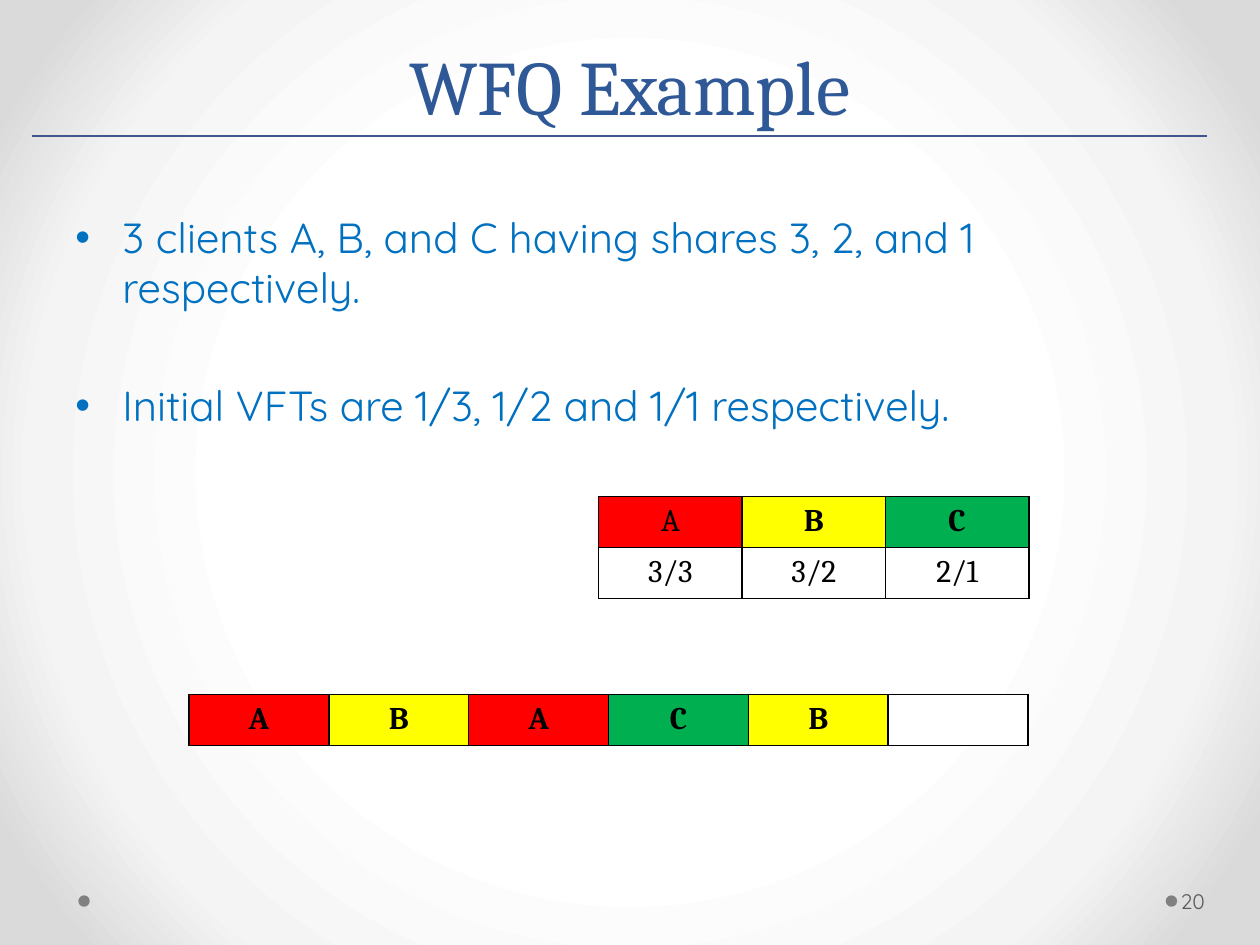
from dataclasses import dataclass

from lxml.etree import SubElement
from pptx import Presentation
from pptx.dml.color import RGBColor
from pptx.enum.shapes import MSO_CONNECTOR as Connector, MSO_SHAPE as Shape
from pptx.enum.text import MSO_ANCHOR as Anchor, PP_ALIGN as Align
from pptx.oxml import parse_xml
from pptx.oxml.ns import nsdecls, qn
from pptx.util import Cm, Pt

HEADING_FONT = "Cambria"
BODY_FONT = "Quicksand"

TITLE_BLUE = RGBColor(0x2F, 0x58, 0x97)
RULE_BLUE = RGBColor(0x42, 0x56, 0x8D)
BODY_BLUE = RGBColor(0x00, 0x70, 0xC0)
DOT_GRAY = RGBColor(0x80, 0x80, 0x80)
NUMBER_GRAY = RGBColor(0x59, 0x59, 0x59)
BLACK = RGBColor(0x00, 0x00, 0x00)
WHITE = RGBColor(0xFF, 0xFF, 0xFF)
RED = RGBColor(0xFF, 0x00, 0x00)
YELLOW = RGBColor(0xFF, 0xFF, 0x00)
GREEN = RGBColor(0x00, 0xB0, 0x50)
CLIENT_COLORS = {"A": RED, "B": YELLOW, "C": GREEN}
BACKGROUND_STOPS = ((50, WHITE), (76, RGBColor(0xF4, 0xF4, 0xF4)),
                    (92, RGBColor(0xDA, 0xDA, 0xDA)))

ROW_HEIGHT = 1.03


@dataclass
class Cell:
    text: str
    bold: bool = False


@dataclass
class Grid:
    left: float
    top: float
    column_width: float
    rows: list[list[Cell]]


@dataclass
class Bullet:
    text: str
    space_before: float


GRIDS = [
    Grid(12.07, 10.01, 2.89, [
        [Cell("A"), Cell("B", True), Cell("C", True)],
        [Cell("3/3"), Cell("3/2"), Cell("2/1")],
    ]),
    Grid(3.81, 14, 2.82, [[Cell(name, True) for name in ("A", "B", "A", "C", "B", "")]]),
]
BULLETS = [
    Bullet("3 clients A, B, and C having shares 3, 2, and 1 respectively.", 4.8),
    Bullet("Initial VFTs are 1/3, 1/2 and 1/1 respectively.", 38.4),
]


def add_run(paragraph, text: str, font: str, size: float, color: RGBColor, bold: bool = False) -> None:
    run = paragraph.add_run()
    run.text = text
    run.font.name = font
    run.font.size = Pt(size)
    run.font.bold = bold
    run.font.color.rgb = color


def set_background(slide) -> None:
    """Fill the background with a gradient spreading from the centre."""
    stops = "".join(f'<a:gs pos="{position * 1000}"><a:srgbClr val="{color}"/></a:gs>'
                    for position, color in BACKGROUND_STOPS)
    background = parse_xml(
        f'<p:bg {nsdecls("p", "a")}><p:bgPr><a:gradFill rotWithShape="1"><a:gsLst>{stops}</a:gsLst>'
        '<a:path path="circle"><a:fillToRect l="50000" t="50000" r="50000" b="50000"/></a:path>'
        '</a:gradFill><a:effectLst/></p:bgPr></p:bg>')
    slide.element.cSld.insert(0, background)


def add_dot(slide, left: float) -> None:
    dot = slide.shapes.add_shape(Shape.OVAL, Cm(left), Cm(18.05), Cm(0.23), Cm(0.23))
    dot.shadow.inherit = False
    dot.fill.solid()
    dot.fill.fore_color.rgb = DOT_GRAY
    dot.line.fill.background()


def format_title(slide) -> None:
    title = slide.shapes.title
    title.left, title.top, title.width, title.height = Cm(1.27), Cm(0.43), Cm(22.86), Cm(2.34)
    title.text_frame.vertical_anchor = Anchor.BOTTOM
    paragraph = title.text_frame.paragraphs[0]
    paragraph.alignment = Align.CENTER
    paragraph.line_spacing = Pt(58)
    add_run(paragraph, "WFQ Example", HEADING_FONT, 44, TITLE_BLUE)


def add_title_rule(slide) -> None:
    rule = slide.shapes.add_connector(Connector.STRAIGHT, Cm(0.64), Cm(2.74), Cm(24.33), Cm(2.74))
    rule.line.color.rgb = RULE_BLUE
    rule.line.width = Pt(0.75)
    SubElement(rule.element.spPr, qn("a:effectLst"))


def add_bullets(slide, bullets: list[Bullet]) -> None:
    frame = slide.shapes.add_textbox(Cm(1.27), Cm(4.14), Cm(22.86), Cm(13.64)).text_frame
    frame.word_wrap = True
    for index, bullet in enumerate(bullets):
        paragraph = frame.add_paragraph() if index else frame.paragraphs[0]
        paragraph.space_before = Pt(bullet.space_before)
        properties = paragraph._p.get_or_add_pPr()
        properties.set("marL", str(Cm(0.95)))
        properties.set("indent", str(-Cm(0.95)))
        SubElement(properties, qn("a:buFont"), typeface="Arial")
        SubElement(properties, qn("a:buChar"), char="•")
        add_run(paragraph, bullet.text, BODY_FONT, 24, BODY_BLUE)


def add_slide_number(slide) -> None:
    frame = slide.shapes.add_textbox(Cm(23.72), Cm(17.65), Cm(1.55), Cm(1.02)).text_frame
    frame.word_wrap = True
    frame.vertical_anchor = Anchor.MIDDLE
    frame.margin_left = Cm(0.08)
    frame.margin_right = Cm(0.13)
    add_run(frame.paragraphs[0], "20", BODY_FONT, 12, NUMBER_GRAY)


def add_borders(cell) -> None:
    properties = cell._tc.get_or_add_tcPr()
    for side in ("lnL", "lnR", "lnT", "lnB"):
        border = SubElement(properties, qn(f"a:{side}"), w=str(Pt(1)))
        fill = SubElement(border, qn("a:solidFill"))
        SubElement(fill, qn("a:srgbClr"), val=str(BLACK))


def add_grid(slide, grid: Grid) -> None:
    row_count, column_count = len(grid.rows), len(grid.rows[0])
    table = slide.shapes.add_table(
        row_count, column_count, Cm(grid.left), Cm(grid.top),
        Cm(grid.column_width * column_count), Cm(ROW_HEIGHT * row_count)).table
    table.first_row = table.horz_banding = False
    for row_index, row in enumerate(grid.rows):
        for column_index, content in enumerate(row):
            cell = table.cell(row_index, column_index)
            add_borders(cell)
            cell.fill.solid()
            cell.fill.fore_color.rgb = CLIENT_COLORS.get(content.text, WHITE)
            if content.text:
                paragraph = cell.text_frame.paragraphs[0]
                paragraph.alignment = Align.CENTER
                add_run(paragraph, content.text, HEADING_FONT, 18, BLACK, content.bold)


def main() -> None:
    presentation = Presentation()
    presentation.slide_width, presentation.slide_height = Cm(25.4), Cm(19.05)
    slide = presentation.slides.add_slide(presentation.slide_layouts[5])
    set_background(slide)
    for left in (23.5, 1.58):
        add_dot(slide, left)
    format_title(slide)
    add_bullets(slide, BULLETS)
    add_slide_number(slide)
    add_title_rule(slide)
    for grid in GRIDS:
        add_grid(slide, grid)
    presentation.save("out.pptx")


if __name__ == "__main__":
    main()
